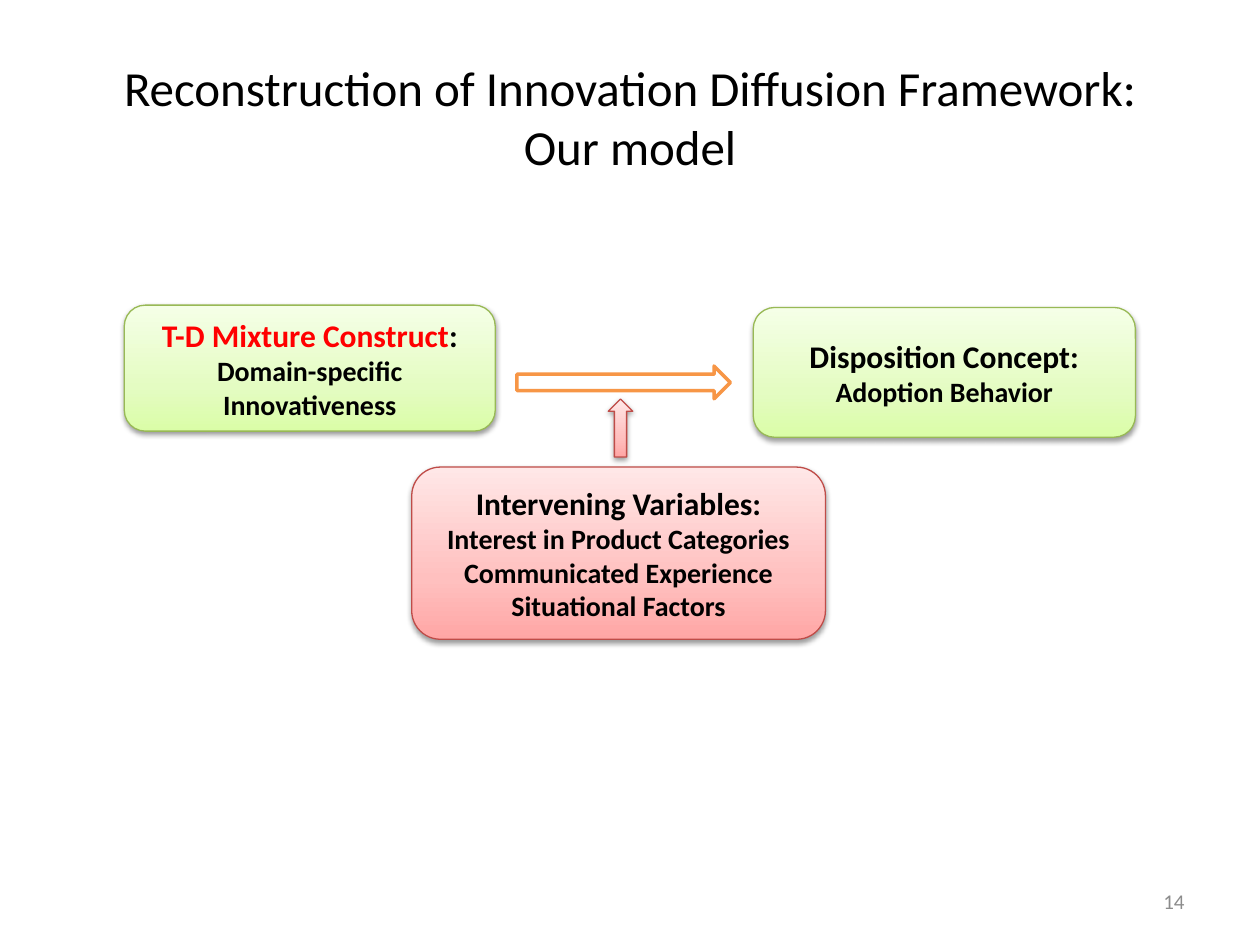
from lxml import etree
from pptx import Presentation
from pptx.dml.color import RGBColor
from pptx.enum.shapes import MSO_SHAPE
from pptx.enum.text import MSO_ANCHOR, PP_ALIGN
from pptx.oxml.ns import qn
from pptx.util import Pt

ROUNDED = MSO_SHAPE.ROUNDED_RECTANGLE
UP_ARROW = MSO_SHAPE.UP_ARROW
RIGHT_ARROW = MSO_SHAPE.RIGHT_ARROW
MIDDLE = MSO_ANCHOR.MIDDLE
CENTER, RIGHT = PP_ALIGN.CENTER, PP_ALIGN.RIGHT

FONT = "Calibri"
GREEN = (["DAFDA7", "E4FCC2", "F5FFE7"], "98B955")
RED = (["FFA6A5", "FFC0BF", "FFE7E7"], "BF4C48")
STOP_POSITIONS = [0, 35, 100]


def rgb(value):
    return RGBColor.from_string(value)


def add_shaded_shape(preset, box, palette):
    """Add a shape with a three-stop upward gradient and a soft shadow below."""
    stops, outline = palette
    shape = slide.shapes.add_shape(preset, *map(Pt, box))
    shape.line.color.rgb = rgb(outline)
    shape.line.width = Pt(0.75)
    shape.fill.gradient()
    shape.fill.gradient_angle = 90
    properties = shape.element.spPr
    stop_list = properties.find(".//" + qn("a:gsLst"))
    for stop in list(stop_list):
        stop_list.remove(stop)
    for position, color in zip(STOP_POSITIONS, stops):
        stop = etree.SubElement(stop_list, qn("a:gs"), pos=str(position * 1000))
        etree.SubElement(stop, qn("a:srgbClr"), val=color)
    shape.shadow.inherit = False
    shadow = etree.SubElement(
        properties.find(qn("a:effectLst")), qn("a:outerShdw"),
        blurRad=str(Pt(3.1)), dist=str(Pt(1.6)), dir="5400000", rotWithShape="0")
    shadow_color = etree.SubElement(shadow, qn("a:srgbClr"), val="000000")
    etree.SubElement(shadow_color, qn("a:alpha"), val="38000")
    return shape


prs = Presentation()
prs.slide_width, prs.slide_height = Pt(720), Pt(540)
slide = prs.slides.add_slide(prs.slide_layouts[5])

# Title
title = slide.shapes.title
title.left, title.top, title.width, title.height = map(Pt, (36, 21.6, 648, 90))
title.text_frame.vertical_anchor = MIDDLE
heading = title.text_frame.paragraphs[0]
heading.text = "Reconstruction of Innovation Diffusion Framework:\nOur model"
heading.alignment = CENTER
heading.font.name = FONT
heading.font.size = Pt(28)
heading.font.color.rgb = rgb("000000")

# Slide number
number_box = slide.shapes.add_textbox(Pt(516), Pt(500.5), Pt(168), Pt(28.75))
number_box.text_frame.word_wrap = True
number_box.text_frame.vertical_anchor = MIDDLE
number = number_box.text_frame.paragraphs[0]
number.text = "14"
number.alignment = RIGHT
number.font.name = FONT
number.font.size = Pt(12)
number.font.color.rgb = rgb("8C8C8C")

# Concepts: box, palette, heading, heading colour, colon colour, details
concepts = [
    ((430.4, 175.7, 218.4, 74.2), GREEN, "Disposition Concept", "000000",
     ["Adoption Behavior"]),
    ((71, 174.4, 212, 72), GREEN, "T-D Mixture Construct", "FF0000",
     ["Domain-specific Innovativeness"]),
    ((235.3, 266.9, 236.4, 98.4), RED, "Intervening Variables", "000000",
     ["Interest in Product Categories", "Communicated Experience",
      "Situational Factors"]),
]
for box, palette, name, name_color, details in concepts:
    frame = add_shaded_shape(ROUNDED, box, palette).text_frame
    frame.word_wrap = True
    frame.vertical_anchor = MIDDLE
    first = frame.paragraphs[0]
    for text, color in ((name, name_color), (":", "000000")):
        run = first.add_run()
        run.text = text
        run.font.color.rgb = rgb(color)
    for detail in details:
        line = frame.add_paragraph()
        line.text = detail
        line.font.color.rgb = rgb("000000")
    for line in frame.paragraphs:
        line.alignment = CENTER
        line.font.name = FONT
        line.font.bold = True
        line.font.size = Pt(18 if line.text.endswith(":") else 16)

# Arrows
effect = slide.shapes.add_shape(RIGHT_ARROW, Pt(295.4), Pt(209.2), Pt(122), Pt(18.7))
effect.shadow.inherit = False
effect.fill.solid()
effect.fill.fore_color.rgb = rgb("FFFFFF")
effect.line.color.rgb = rgb("F79646")
effect.line.width = Pt(2)

add_shaded_shape(UP_ARROW, (347.6, 228, 14, 33.2), RED)

prs.save("out.pptx")
